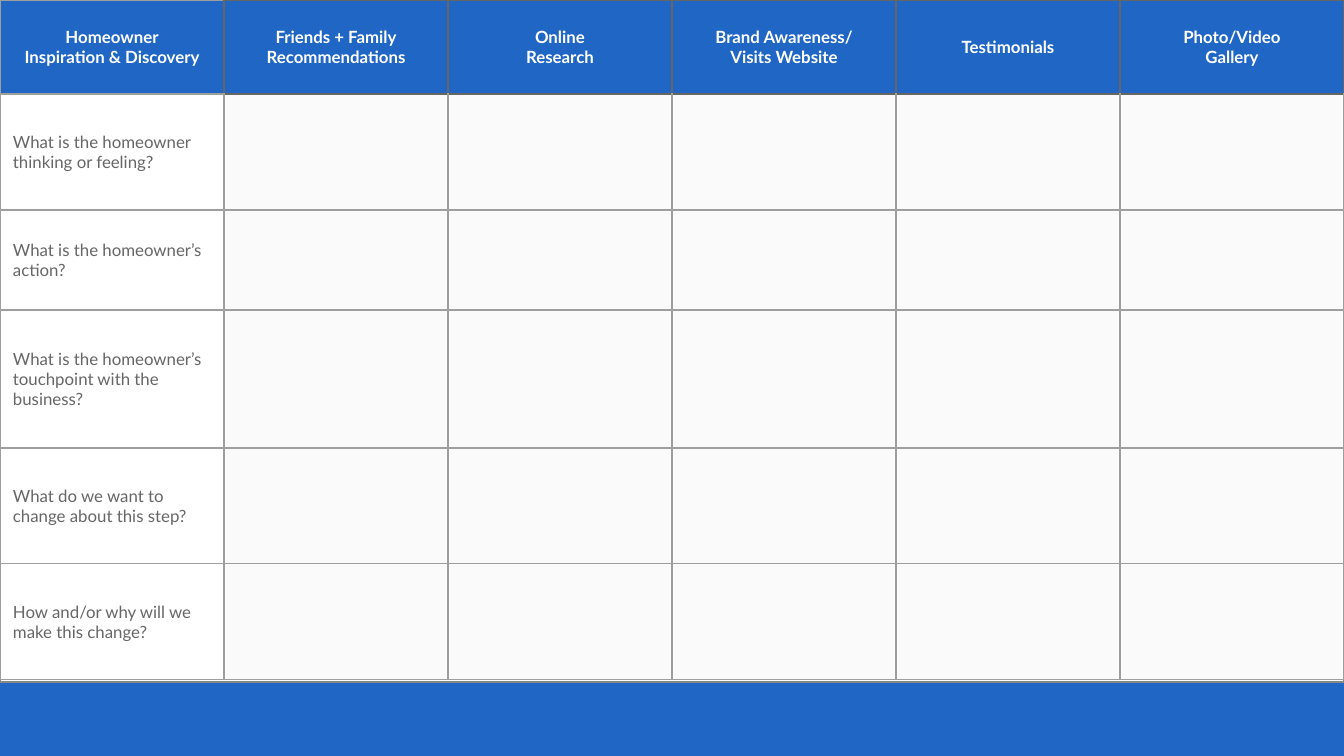
from dataclasses import dataclass
from typing import NamedTuple

import lxml.etree
import pptx
import pptx.dml.color
import pptx.enum.shapes
import pptx.enum.text
import pptx.oxml.ns
import pptx.table
import pptx.util

EMU_PER_PX = 914400 / 134.4
SLIDE_WIDTH, SLIDE_HEIGHT = 1344, 756
PANEL_HEIGHT = 682
HEADER_HEIGHT = 94
CELL_MARGIN = 13


@dataclass(frozen=True)
class Theme:
    font: str = "Lato"
    text_size: float = 9
    line_width: float = 0.75
    blue: str = "2066C5"
    white: str = "FFFFFF"
    answer: str = "FAFAFA"
    text: str = "666666"
    panel_line: str = "888888"
    grid: str = "9E9E9E"
    header_grid: str = "666666"


class Question(NamedTuple):
    height: int
    label: str


class CellStyle(NamedTuple):
    fill: str
    color: str
    bold: bool
    alignment: pptx.enum.text.PP_ALIGN


THEME = Theme()
STAGES = [
    "Homeowner\nInspiration & Discovery",
    "Friends + Family\nRecommendations",
    "Online\nResearch",
    "Brand Awareness/\nVisits Website",
    "Testimonials",
    "Photo/Video\nGallery",
]
QUESTIONS = [
    Question(116, "What is the homeowner thinking or feeling?"),
    Question(100, "What is the homeowner’s action?"),
    Question(138, "What is the homeowner’s touchpoint with the business?"),
    Question(116, "What do we want to change about this step?"),
    Question(116, "How and/or why will we make this change?"),
]
ALIGN = pptx.enum.text.PP_ALIGN
HEADER = CellStyle(THEME.blue, THEME.white, True, ALIGN.CENTER)
LABEL = CellStyle(THEME.white, THEME.text, False, ALIGN.LEFT)
ANSWER = LABEL._replace(fill=THEME.answer)


def px(length: int) -> pptx.util.Emu:
    return pptx.util.Emu(round(length * EMU_PER_PX))


def rgb(color: str) -> pptx.dml.color.RGBColor:
    return pptx.dml.color.RGBColor.from_string(color)


def set_attributes(target: object, values: dict) -> None:
    for name, value in values.items():
        setattr(target, name, value)


def set_borders(cell: pptx.table._Cell, colors: dict[str, str]) -> None:
    properties = cell._tc.get_or_add_tcPr()
    qn = pptx.oxml.ns.qn
    for position, side in enumerate("LRTB"):
        line = lxml.etree.Element(qn(f"a:ln{side}"), w=str(pptx.util.Pt(THEME.line_width)))
        fill = lxml.etree.SubElement(line, qn("a:solidFill"))
        lxml.etree.SubElement(fill, qn("a:srgbClr"), val=colors[side])
        properties.insert(position, line)


def border_colors(row: int, column: int) -> dict[str, str]:
    colors = dict.fromkeys("LRTB", THEME.grid)
    if row == 0:
        dark_sides = "R" if column == 0 else "LRTB"
    else:
        dark_sides = "T" if row == 1 and column > 0 else ""
    return colors | dict.fromkeys(dark_sides, THEME.header_grid)


def format_cell(cell: pptx.table._Cell, text: str, style: CellStyle) -> None:
    margins = {f"margin_{side}": px(CELL_MARGIN) for side in ("left", "right", "top", "bottom")}
    set_attributes(cell, {
        "text": text,
        "vertical_anchor": pptx.enum.text.MSO_ANCHOR.MIDDLE,
        **margins,
    })
    cell.fill.solid()
    cell.fill.fore_color.rgb = rgb(style.fill)
    for paragraph in cell.text_frame.paragraphs:
        paragraph.alignment = style.alignment
        set_attributes(paragraph.font, {
            "name": THEME.font,
            "size": pptx.util.Pt(THEME.text_size),
            "bold": style.bold,
        })
        paragraph.font.color.rgb = rgb(style.color)


def add_panel(slide) -> None:
    panel = slide.shapes.add_shape(
        pptx.enum.shapes.MSO_SHAPE.RECTANGLE, 0, 0, px(SLIDE_WIDTH), px(PANEL_HEIGHT)
    )
    panel.shadow.inherit = False
    panel.fill.solid()
    panel.fill.fore_color.rgb = rgb(THEME.white)
    panel.line.color.rgb = rgb(THEME.panel_line)
    panel.line.width = pptx.util.Pt(THEME.line_width)


def add_journey_table(slide) -> None:
    heights = [HEADER_HEIGHT] + [question.height for question in QUESTIONS]
    table = slide.shapes.add_table(
        len(heights), len(STAGES), 0, 0, px(SLIDE_WIDTH), px(sum(heights))
    ).table
    set_attributes(table, {"first_row": False, "horz_banding": False})
    for column in table.columns:
        column.width = px(SLIDE_WIDTH // len(STAGES))
    for row, height in zip(table.rows, heights):
        row.height = px(height)

    for column, stage in enumerate(STAGES):
        format_cell(table.cell(0, column), stage, HEADER)
    for row, question in enumerate(QUESTIONS, start=1):
        format_cell(table.cell(row, 0), question.label, LABEL)
        for column in range(1, len(STAGES)):
            format_cell(table.cell(row, column), "", ANSWER)
    for row in range(len(heights)):
        for column in range(len(STAGES)):
            set_borders(table.cell(row, column), border_colors(row, column))


def main() -> None:
    presentation = pptx.Presentation()
    set_attributes(presentation, {
        "slide_width": px(SLIDE_WIDTH),
        "slide_height": px(SLIDE_HEIGHT),
    })
    slide = presentation.slides.add_slide(presentation.slide_layouts[6])
    slide.background.fill.solid()
    slide.background.fill.fore_color.rgb = rgb(THEME.blue)
    add_panel(slide)
    add_journey_table(slide)
    presentation.save("out.pptx")


if __name__ == "__main__":
    main()
